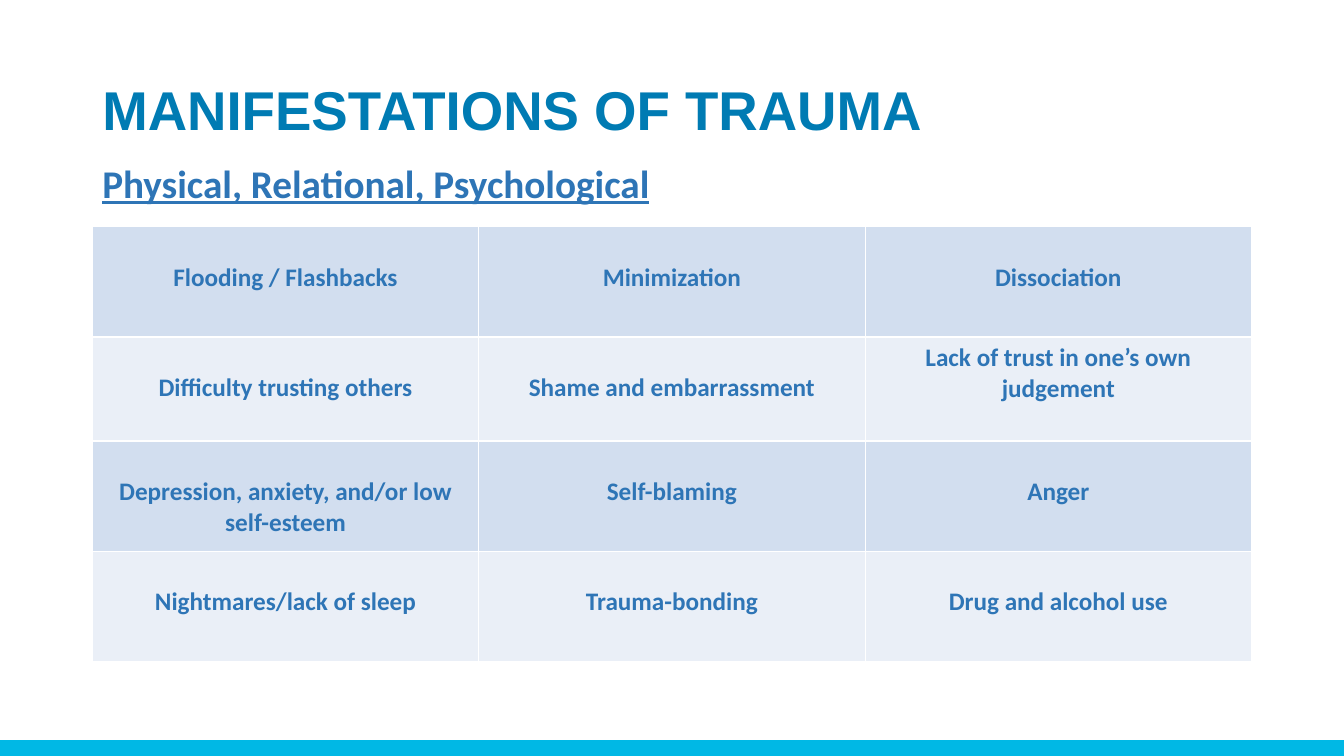
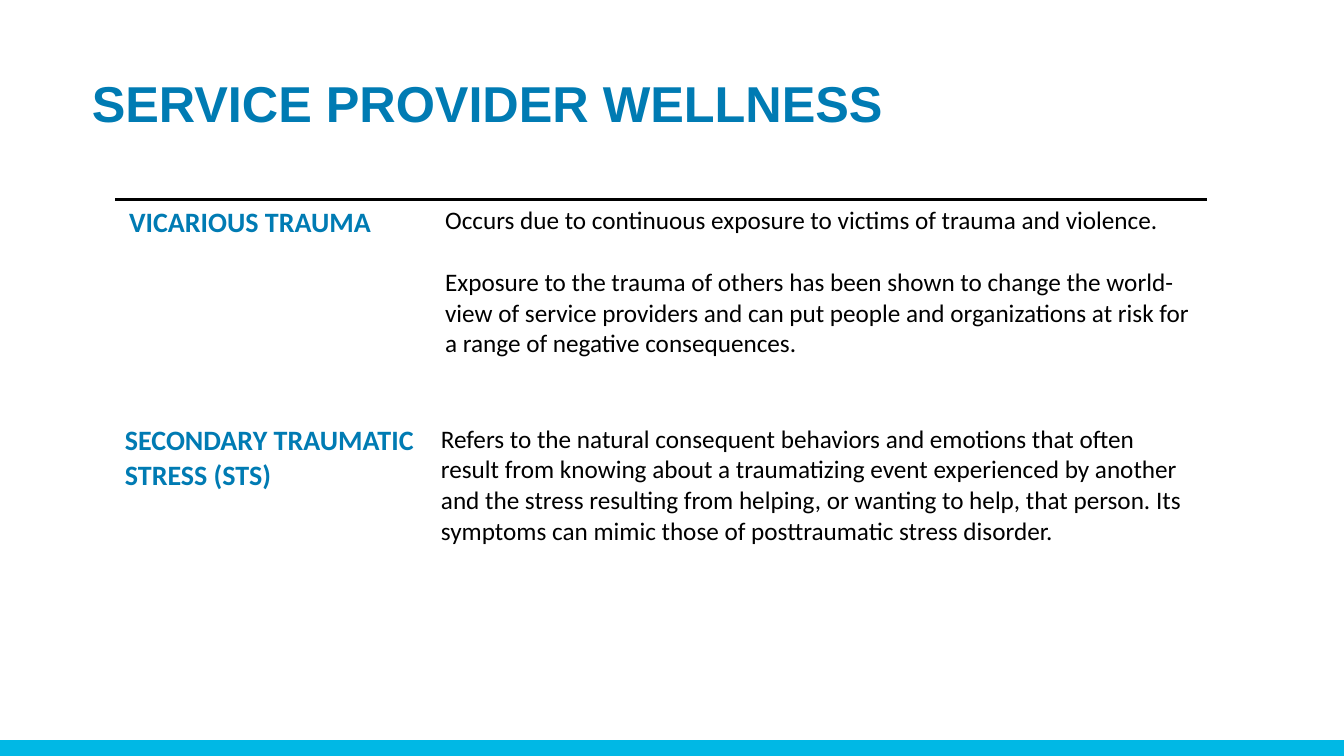
from lxml import etree
from pptx import Presentation
from pptx.dml.color import RGBColor
from pptx.enum.shapes import MSO_SHAPE
from pptx.enum.text import MSO_ANCHOR, PP_ALIGN
from pptx.oxml.ns import qn
from pptx.util import Pt

PX = 9525  # EMU per px, 96 px to the inch
SLIDE_W, SLIDE_H = 1280, 720
BAND_H = 15
RECTANGLE = MSO_SHAPE.RECTANGLE
MIDDLE, TOP = MSO_ANCHOR.MIDDLE, MSO_ANCHOR.TOP
LEFT, CENTER = PP_ALIGN.LEFT, PP_ALIGN.CENTER
BLANK = 6

COLORS = {
    "title": "007BB3",
    "accent": "2E75B6",
    "band": "00B8E5",
    "row_dark": "D2DEEF",
    "row_light": "EAEFF7",
    "white": "FFFFFF",
    "black": "000000",
}

MANIFESTATIONS = [
    ["Flooding / Flashbacks", "Minimization", "Dissociation"],
    ["Difficulty trusting others", "Shame and embarrassment",
     "Lack of trust in one’s own judgement"],
    ["Depression, anxiety, and/or low self-esteem", "Self-blaming", "Anger"],
    ["Nightmares/lack of sleep", "Trauma-bonding", "Drug and alcohol use"],
]
RAISED_CELL = (1, 2)

# Term, paragraphs of its definition, side margin
DEFINITIONS = [
    ("VICARIOUS TRAUMA", [
        "Occurs due to continuous exposure to victims of trauma and violence.",
        "Exposure to the trauma of others has been shown to change the "
        "world-view of service providers and can put people and organizations "
        "at risk for a range of negative consequences.",
    ], 13),
    ("SECONDARY TRAUMATIC STRESS (STS)", [
        "Refers to the natural consequent behaviors and emotions that often "
        "result from knowing about a traumatizing event experienced by another "
        "and the stress resulting from helping, or wanting to help, that "
        "person. Its symptoms can mimic those of posttraumatic stress disorder.",
    ], 9),
]


def px(*lengths):
    return [length * PX for length in lengths]


def rgb(name):
    return RGBColor.from_string(COLORS[name])


def add_run(paragraph, text, size, color, font="Calibri", bold=True,
            underline=False):
    run = paragraph.add_run()
    run.text = text
    run.font.name = font
    run.font.size = Pt(size)
    run.font.bold = bold
    run.font.underline = underline
    run.font.color.rgb = rgb(color)


def add_text_box(slide, box, anchor):
    """Return the first paragraph of a new wrapping text box."""
    frame = slide.shapes.add_textbox(*px(*box)).text_frame
    frame.word_wrap = True
    frame.vertical_anchor = anchor
    return frame.paragraphs[0]


def add_slide(prs, title, left, top, size):
    """Add a slide with the bottom band and the title."""
    slide = prs.slides.add_slide(prs.slide_layouts[BLANK])
    band = slide.shapes.add_shape(
        RECTANGLE, *px(0, SLIDE_H - BAND_H, SLIDE_W, BAND_H))
    band.shadow.inherit = False
    band.fill.solid()
    band.fill.fore_color.rgb = rgb("band")
    band.line.fill.background()
    heading = add_text_box(slide, (left, top, 1104, 139), MIDDLE)
    heading.line_spacing = 0.9
    add_run(heading, title, size, "title", font="Arial")
    return slide


def add_plain_table(slide, left, top, widths, heights):
    table = slide.shapes.add_table(
        len(heights), len(widths),
        *px(left, top, sum(widths), sum(heights))).table
    table.first_row = table.horz_banding = False
    for column, width in zip(table.columns, widths):
        column.width = width * PX
    for row, height in zip(table.rows, heights):
        row.height = height * PX
    return table


def style_cell(cell, borders, fill=None):
    """Set borders, a dict of side (L, R, T, B) to (color, points), and fill."""
    properties = cell._tc.get_or_add_tcPr()
    for side in "LRTB":
        line = etree.SubElement(properties, qn(f"a:ln{side}"))
        if side in borders:
            color, width = borders[side]
            line.set("w", str(int(Pt(width))))
            solid = etree.SubElement(line, qn("a:solidFill"))
            etree.SubElement(solid, qn("a:srgbClr"), val=COLORS[color])
        else:
            line.set("w", "0")
            etree.SubElement(line, qn("a:noFill"))
    if fill:
        cell.fill.solid()
        cell.fill.fore_color.rgb = rgb(fill)
    else:
        cell.fill.background()


def set_margins(cell, side, top, bottom):
    cell.margin_left = cell.margin_right = side * PX
    cell.margin_top, cell.margin_bottom = px(top, bottom)


def fill_cell(cell, paragraphs, size, color, bold=True, align=LEFT):
    frame = cell.text_frame
    for index, text in enumerate(paragraphs):
        paragraph = frame.add_paragraph() if index else frame.paragraphs[0]
        paragraph.alignment = align
        if index:
            paragraph.space_before = Pt(22)
        add_run(paragraph, text, size, color, bold=bold)


def add_manifestations(prs):
    slide = add_slide(prs, "MANIFESTATIONS OF TRAUMA", 88, 38, 39)
    table = add_plain_table(slide, 88, 216, [368] * 3, [105, 99, 105, 105])
    grid = dict.fromkeys("LRTB", ("white", 1))
    for r, symptoms in enumerate(MANIFESTATIONS):
        for c, symptom in enumerate(symptoms):
            cell = table.cell(r, c)
            style_cell(cell, grid, "row_light" if r % 2 else "row_dark")
            set_margins(cell, 10, 5 if (r, c) == RAISED_CELL else 34, 5)
            fill_cell(cell, [symptom], 18, "accent", align=CENTER)
    subtitle = add_text_box(slide, (88, 147, 822, 55), TOP)
    add_run(subtitle, "Physical, Relational, Psychological", 28, "accent",
            underline=True)


def add_wellness(prs):
    slide = add_slide(prs, "SERVICE PROVIDER WELLNESS", 78, 32, 36)
    table = add_plain_table(slide, 110, 190, [301, 739], [208, 187])
    for r, (term, definition, side) in enumerate(DEFINITIONS):
        term_cell, definition_cell = table.cell(r, 0), table.cell(r, 1)
        for cell in (term_cell, definition_cell):
            style_cell(cell, {} if r else {"T": ("black", 2.25)})
            set_margins(cell, side, 6, 6)
        fill_cell(term_cell, [term], 20, "title")
        fill_cell(definition_cell, definition, 18, "black", bold=False)


def main():
    prs = Presentation()
    prs.slide_width, prs.slide_height = px(SLIDE_W, SLIDE_H)
    add_manifestations(prs)
    add_wellness(prs)
    prs.save("out.pptx")


if __name__ == "__main__":
    main()
